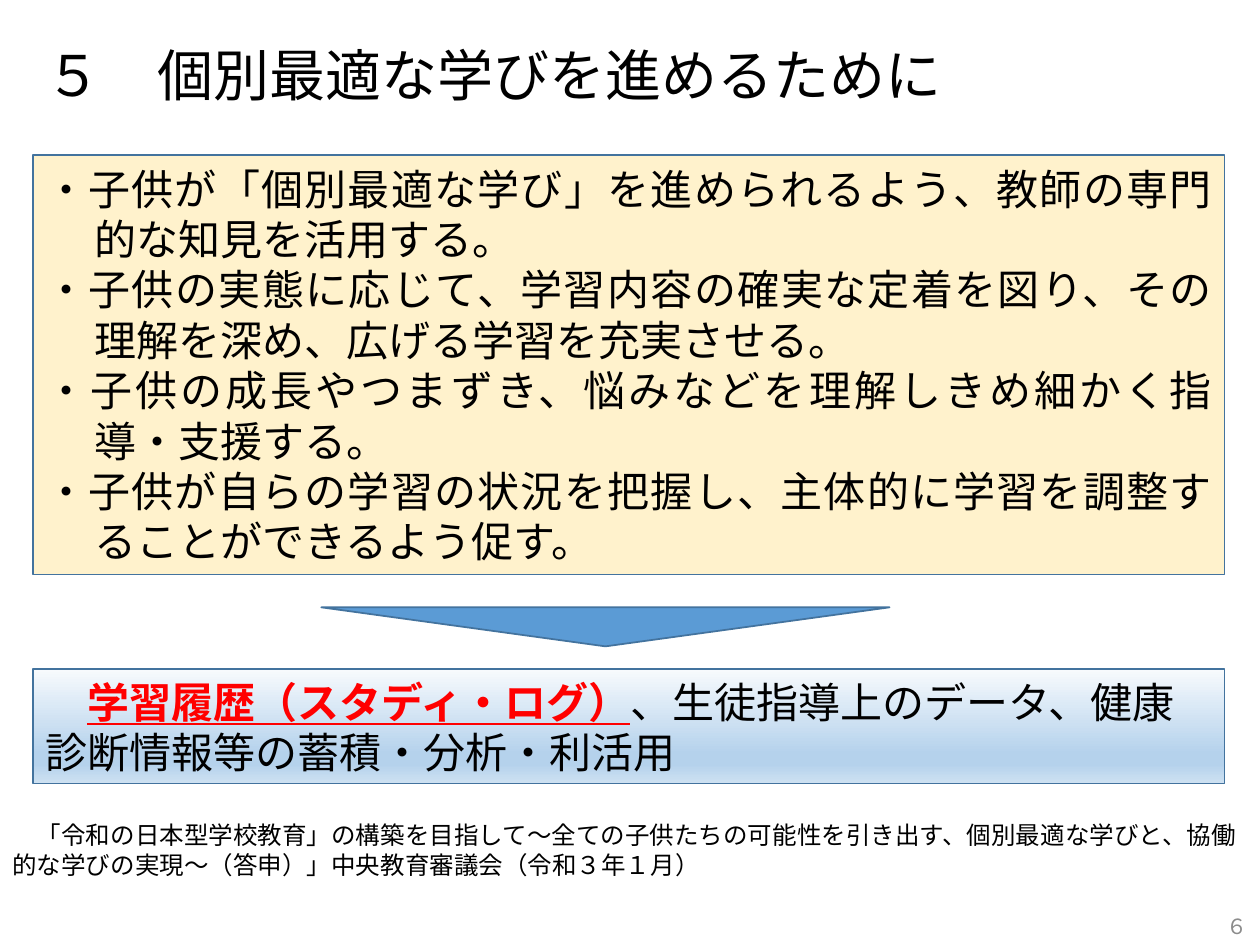
from lxml import etree
from pptx import Presentation
from pptx.dml.color import RGBColor
from pptx.enum.lang import MSO_LANGUAGE_ID
from pptx.enum.shapes import MSO_SHAPE
from pptx.enum.text import MSO_ANCHOR, MSO_AUTO_SIZE, PP_ALIGN
from pptx.oxml.ns import qn
from pptx.util import Inches, Pt

RECTANGLE = MSO_SHAPE.RECTANGLE
TRIANGLE = MSO_SHAPE.ISOSCELES_TRIANGLE
MIDDLE = MSO_ANCHOR.MIDDLE
FIT_SHAPE = MSO_AUTO_SIZE.SHAPE_TO_FIT_TEXT
NO_FIT = MSO_AUTO_SIZE.NONE
LEFT, RIGHT, JUSTIFY = PP_ALIGN.LEFT, PP_ALIGN.RIGHT, PP_ALIGN.JUSTIFY
JAPANESE = MSO_LANGUAGE_ID.JAPANESE

FONT = "Noto Sans CJK JP"
BLACK = RGBColor(0x00, 0x00, 0x00)
RED = RGBColor(0xFF, 0x00, 0x00)
GRAY = RGBColor(0x8C, 0x8C, 0x8C)
CREAM = RGBColor(0xFF, 0xF2, 0xCC)
BLUE = RGBColor(0x5B, 0x9B, 0xD5)
DARK_BLUE = RGBColor(0x43, 0x73, 0x9E)
PALE_BLUE = RGBColor(0xF7, 0xFA, 0xFD)
LIGHT_BLUE = RGBColor(0xB5, 0xD2, 0xEC)
SOFT_BLUE = RGBColor(0xCE, 0xE1, 0xF2)
GRADIENT_STOPS = [(0, PALE_BLUE), (74, LIGHT_BLUE), (83, LIGHT_BLUE), (100, SOFT_BLUE)]

BOX_LEFT, BOX_WIDTH = 0.26, 9.46
HANGING_INDENT = 0.39

GUIDELINES = [
    "・子供が「個別最適な学び」を進められるよう、教師の専門的な知見を活用する。",
    "・子供の実態に応じて、学習内容の確実な定着を図り、その理解を深め、広げる学習を充実させる。",
    "・子供の成長やつまずき、悩みなどを理解しきめ細かく指導・支援する。",
    "・子供が自らの学習の状況を把握し、主体的に学習を調整することができるよう促す。",
]
SOURCE_NOTE = (
    "　「令和の日本型学校教育」の構築を目指して～全ての子供たちの可能性を引き出す、"
    "個別最適な学びと、協働的な学びの実現～（答申）」中央教育審議会（令和３年１月）"
)


def add_run(paragraph, text, size=24, color=BLACK, bold=False, underline=False):
    run = paragraph.add_run()
    run.text = text
    font = run.font
    font.name = FONT
    font.size = Pt(size)
    font.color.rgb = color
    font.bold = bold
    font.underline = underline
    font.language_id = JAPANESE
    east_asian = etree.SubElement(font._element, qn("a:ea"))
    east_asian.set("typeface", FONT)


def write_text(shape, paragraphs, align=LEFT, hanging=0, auto_size=FIT_SHAPE, **run_format):
    """Fill a shape with paragraphs, each a list of (text, extra run format)."""
    frame = shape.text_frame
    frame.word_wrap = True
    frame.auto_size = auto_size
    frame.vertical_anchor = MIDDLE
    for index, runs in enumerate(paragraphs):
        paragraph = frame.add_paragraph() if index else frame.paragraphs[0]
        paragraph.alignment = align
        if hanging:
            properties = paragraph._p.get_or_add_pPr()
            properties.set("marL", str(Inches(hanging)))
            properties.set("indent", str(-Inches(hanging)))
        for text, extra in runs:
            add_run(paragraph, text, **{**run_format, **extra})


def add_outlined_shape(slide, kind, left, top, width, height, fill):
    shape = slide.shapes.add_shape(
        kind, Inches(left), Inches(top), Inches(width), Inches(height))
    shape.shadow.inherit = False
    shape.fill.solid()
    shape.fill.fore_color.rgb = fill
    shape.line.color.rgb = DARK_BLUE
    shape.line.width = Pt(1)
    return shape


def apply_vertical_gradient(shape, stops):
    shape.fill.gradient()
    gradient = shape._element.spPr.find(qn("a:gradFill"))
    for child in list(gradient):
        gradient.remove(child)
    stop_list = etree.SubElement(gradient, qn("a:gsLst"))
    for percent, color in stops:
        stop = etree.SubElement(stop_list, qn("a:gs"), pos=str(percent * 1000))
        etree.SubElement(stop, qn("a:srgbClr"), val=str(color))
    etree.SubElement(gradient, qn("a:lin"), ang=str(90 * 60000), scaled="0")


def add_text_box(slide, left, top, width, height, text, **text_format):
    box = slide.shapes.add_textbox(
        Inches(left), Inches(top), Inches(width), Inches(height))
    write_text(box, [[(text, {})]], **text_format)


def set_title(slide, text):
    title = slide.shapes.title
    title.left, title.top = Inches(0.26), Inches(0.19)
    title.width, title.height = Inches(9.65), Inches(0.79)
    write_text(title, [[(text, {})]], size=32, auto_size=NO_FIT)


def main():
    presentation = Presentation()
    presentation.slide_width = Inches(10)
    presentation.slide_height = Inches(7.5)
    slide = presentation.slides.add_slide(presentation.slide_layouts[5])

    set_title(slide, "５　個別最適な学びを進めるために")

    guideline_box = add_outlined_shape(
        slide, RECTANGLE, BOX_LEFT, 1.23, BOX_WIDTH, 3.33, CREAM)
    write_text(guideline_box, [[(text, {})] for text in GUIDELINES],
               align=JUSTIFY, hanging=HANGING_INDENT)

    down_arrow = add_outlined_shape(slide, TRIANGLE, 2.55, 4.82, 4.51, 0.31, BLUE)
    down_arrow.rotation = 180

    data_box = add_outlined_shape(
        slide, RECTANGLE, BOX_LEFT, 5.31, BOX_WIDTH, 0.91, LIGHT_BLUE)
    apply_vertical_gradient(data_box, GRADIENT_STOPS)
    emphasis = {"color": RED, "bold": True}
    write_text(data_box, [[
        ("　", emphasis),
        ("学習履歴（スタディ・ログ）", {**emphasis, "underline": True}),
        ("、生徒指導上のデータ、健康診断情報等の蓄積・分析・利活用", {}),
    ]])

    add_text_box(slide, 0, 6.46, 10, 0.57, SOURCE_NOTE, size=14)
    add_text_box(slide, 7.75, 7.15, 2.25, 0.4, "６", size=12, color=GRAY,
                 align=RIGHT, auto_size=NO_FIT)

    presentation.save("out.pptx")


if __name__ == "__main__":
    main()
